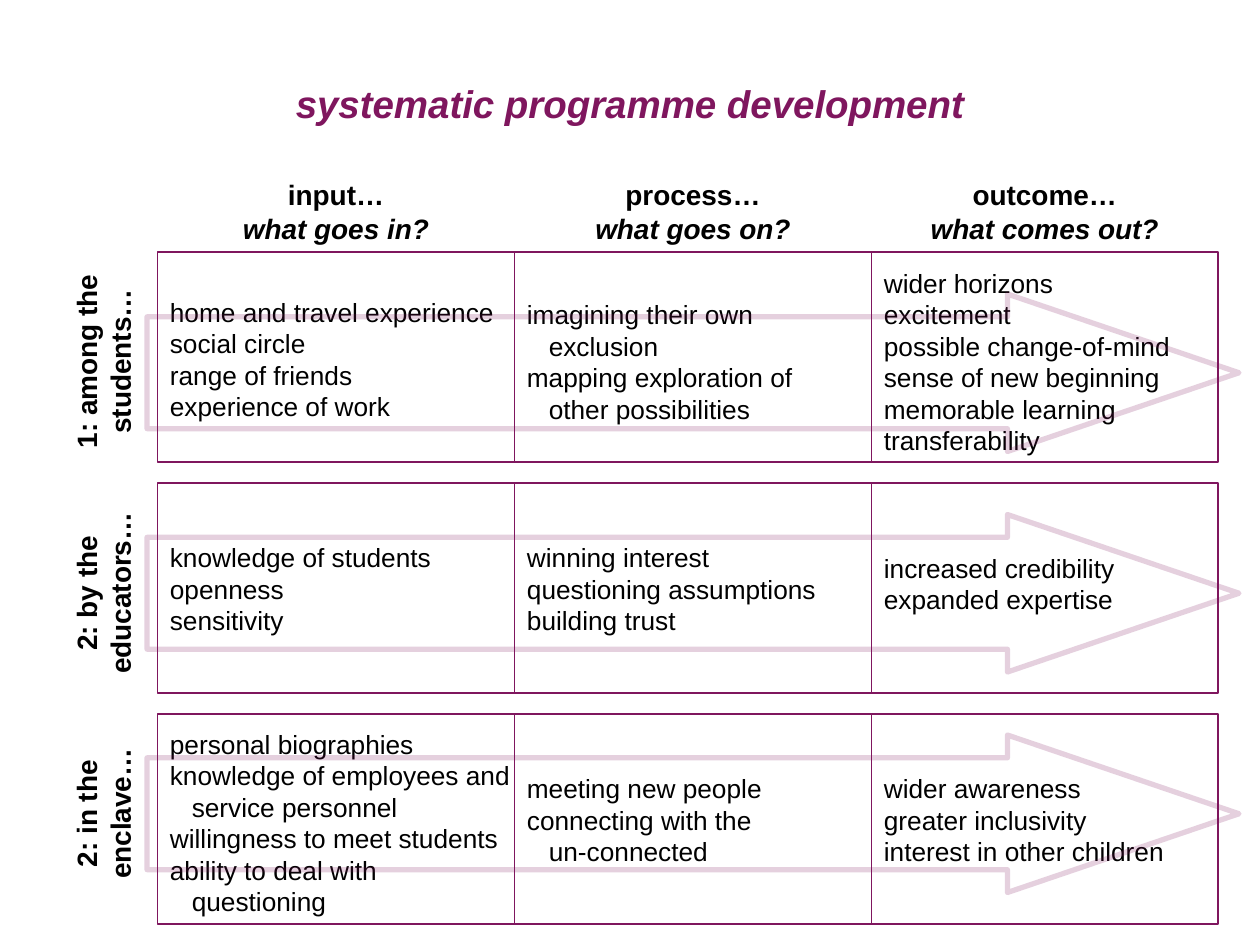
from lxml import etree
from pptx import Presentation
from pptx.dml.color import RGBColor
from pptx.enum.shapes import MSO_CONNECTOR, MSO_SHAPE
from pptx.enum.text import MSO_ANCHOR, MSO_AUTO_SIZE, PP_ALIGN
from pptx.oxml.ns import qn
from pptx.util import Pt

COLORS = {"plum": "7F165E", "text": "000000"}
COLUMN_EDGES = [90, 294, 498, 696]
ROW_TOP, ROW_PITCH, ROW_HEIGHT = 144, 132, 120
ARROW_TOP, ARROW_PITCH = 168, 126
HEADER_TOP, HEADER_HEIGHT = 98, 46
LABEL_CENTER_X = 59
LINE_HEIGHT = 18

HEADERS = [
    ("input…", "what goes in?"),
    ("process…", "what goes on?"),
    ("outcome…", "what comes out?"),
]

# Row label, its length and centre, then (top, items) for each column.
# A "\v" continues an item on a hanging line.
ROWS = [
    ("1: among the students…", 138, 206.6, [
        (165.6, ["home and travel experience", "social circle",
                 "range of friends", "experience of work"]),
        (167, ["imagining their own\vexclusion",
               "mapping exploration of\vother possibilities"]),
        (149, ["wider horizons", "excitement", "possible change-of-mind",
               "sense of new beginning", "memorable learning",
               "transferability"]),
    ]),
    ("2: by the educators…", 114.5, 339, [
        (306, ["knowledge of students", "openness", "sensitivity"]),
        (306, ["winning interest", "questioning assumptions",
               "building trust"]),
        (312, ["increased credibility", "expanded expertise"]),
    ]),
    ("2: in the enclave…", 114.5, 465, [
        (412.6, ["personal biographies",
                 "knowledge of employees and\vservice personnel",
                 "willingness to meet students",
                 "ability to deal with\vquestioning"]),
        (438, ["meeting new people", "connecting with the\vun-connected"]),
        (438, ["wider awareness", "greater inclusivity",
               "interest in other children"]),
    ]),
]


class SlideBuilder:
    font_name = "Arial"
    title_size, heading_size, body_size = 22, 16, 15
    hanging_indent = 12.5

    def __init__(self, slide):
        self.slide = slide

    def style(self, paragraph, size, color="text", bold=False, italic=None):
        font = paragraph.font
        font.name, font.size = self.font_name, Pt(size)
        font.bold, font.italic = bold, italic
        font.color.rgb = RGBColor.from_string(COLORS[color])

    def title(self, text, left, top, width, height):
        title = self.slide.shapes.title
        title.left, title.top = Pt(left), Pt(top)
        title.width, title.height = Pt(width), Pt(height)
        frame = title.text_frame
        frame.text = text
        frame.auto_size = MSO_AUTO_SIZE.NONE
        frame.vertical_anchor = MSO_ANCHOR.TOP
        paragraph = frame.paragraphs[0]
        paragraph.alignment = PP_ALIGN.CENTER
        self.style(paragraph, self.title_size, "plum", True, True)

    def text_box(self, left, top, width, height):
        box = self.slide.shapes.add_textbox(
            Pt(left), Pt(top), Pt(width), Pt(height))
        box.text_frame.word_wrap = True
        return box

    def column_header(self, name, question, left, top, width, height):
        frame = self.text_box(left, top, width, height).text_frame
        paragraph = frame.paragraphs[0]
        paragraph.alignment = PP_ALIGN.CENTER
        self.style(paragraph, self.heading_size, bold=True)
        paragraph.add_run().text = name
        paragraph.add_line_break()
        question_run = paragraph.add_run()
        question_run.text = question
        question_run.font.italic = True

    def row_label(self, text, center_x, center_y, length, thickness):
        box = self.text_box(center_x - length / 2, center_y - thickness / 2,
                            length, thickness)
        box.rotation = 270
        paragraph = box.text_frame.paragraphs[0]
        paragraph.text = text
        paragraph.alignment = PP_ALIGN.CENTER
        self.style(paragraph, self.heading_size, bold=True)

    def items(self, items, left, top, width):
        line_count = sum(1 + item.count("\v") for item in items)
        height = line_count * LINE_HEIGHT + 7.2
        frame = self.text_box(left, top, width, height).text_frame
        frame.margin_right = 0
        for index, item in enumerate(items):
            paragraph = (frame.add_paragraph() if index
                         else frame.paragraphs[0])
            paragraph.text = item
            self.style(paragraph, self.body_size)
            properties = paragraph._p.get_or_add_pPr()
            properties.set("marL", str(Pt(self.hanging_indent)))
            properties.set("indent", str(-Pt(self.hanging_indent)))

    def outline(self, kind, left, top, width, height, line_width=0.75):
        shape = self.slide.shapes.add_shape(
            kind, Pt(left), Pt(top), Pt(width), Pt(height))
        shape.shadow.inherit = False
        shape.fill.background()
        shape.line.color.rgb = RGBColor.from_string(COLORS["plum"])
        shape.line.width = Pt(line_width)
        return shape

    def arrow(self, left, top, width, height):
        """Draw a block arrow with a faint, 20 % opaque outline."""
        arrow = self.outline(MSO_SHAPE.RIGHT_ARROW, left, top, width, height, 3)
        arrow.adjustments[0] = 0.71
        arrow.adjustments[1] = 1.47
        line_color = arrow.line._ln.find(".//" + qn("a:srgbClr"))
        etree.SubElement(line_color, qn("a:alpha"), val="20000")

    def divider(self, x, top, bottom):
        line = self.slide.shapes.add_connector(
            MSO_CONNECTOR.STRAIGHT, Pt(x), Pt(top), Pt(x), Pt(bottom))
        line.line.color.rgb = RGBColor.from_string(COLORS["plum"])
        line.line.width = Pt(0.75)
        etree.SubElement(line._element.spPr, qn("a:effectLst"))


def main():
    presentation = Presentation()
    presentation.slide_width, presentation.slide_height = Pt(720), Pt(540)
    builder = SlideBuilder(
        presentation.slides.add_slide(presentation.slide_layouts[5]))
    builder.title("systematic programme development", 0, 42, 720, 34)

    columns = [(left, right - left)
               for left, right in zip(COLUMN_EDGES, COLUMN_EDGES[1:])]
    for (name, question), (left, width) in zip(HEADERS, columns):
        builder.column_header(name, question, left, HEADER_TOP,
                              width, HEADER_HEIGHT)

    table_left, table_right = COLUMN_EDGES[0], COLUMN_EDGES[-1]
    for index, (label, length, center_y, cells) in enumerate(ROWS):
        top = ROW_TOP + index * ROW_PITCH
        builder.outline(MSO_SHAPE.RECTANGLE, table_left, top,
                        table_right - table_left, ROW_HEIGHT)
        for x in COLUMN_EDGES[1:-1]:
            builder.divider(x, top, top + ROW_HEIGHT)
        builder.row_label(label, LABEL_CENTER_X, center_y, length,
                          HEADER_HEIGHT)
        for (items_top, items), (left, width) in zip(cells, columns):
            builder.items(items, left, items_top, width)

    for index in range(len(ROWS)):
        builder.arrow(84, ARROW_TOP + index * ARROW_PITCH, 624, 90)

    presentation.save("out.pptx")


if __name__ == "__main__":
    main()
